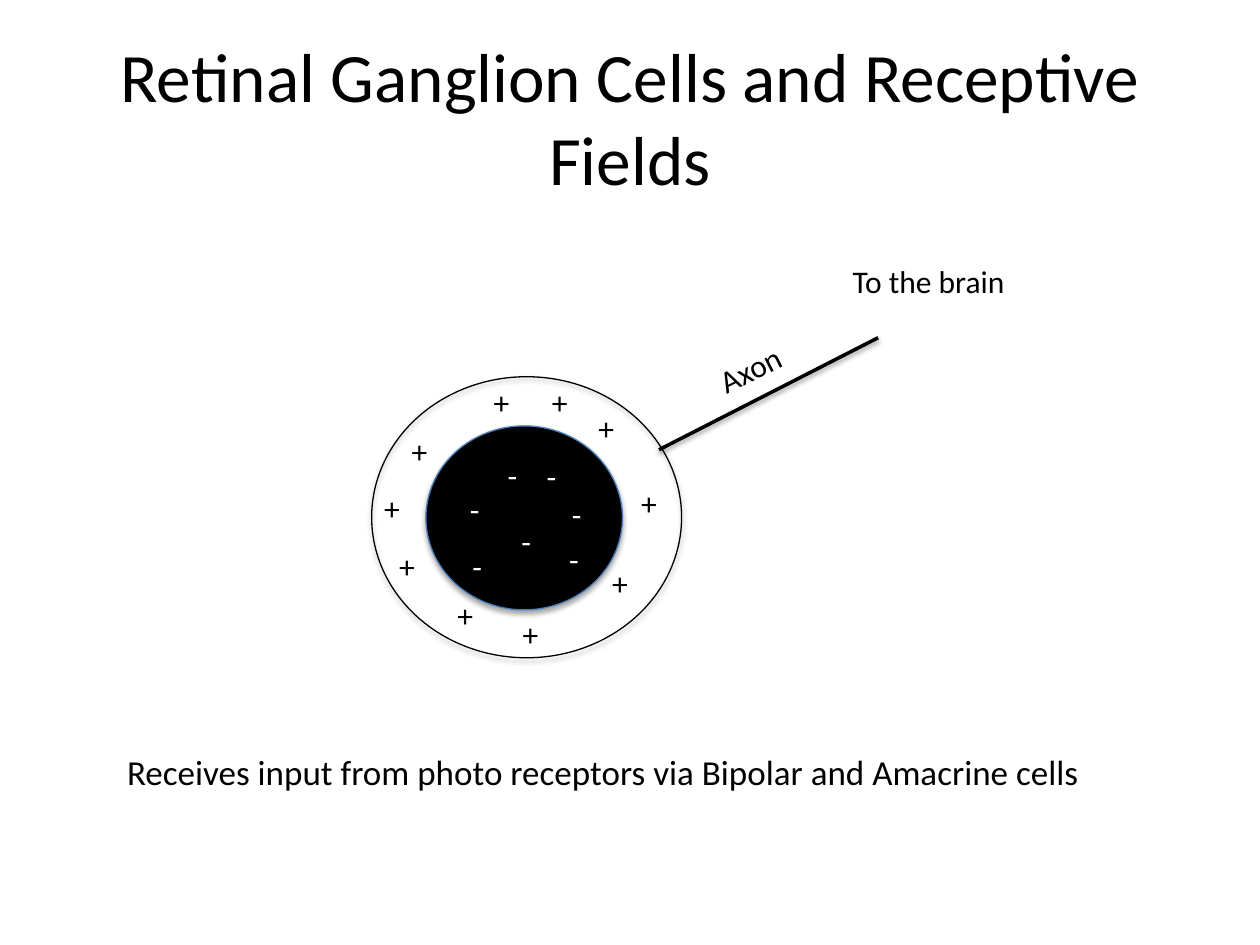
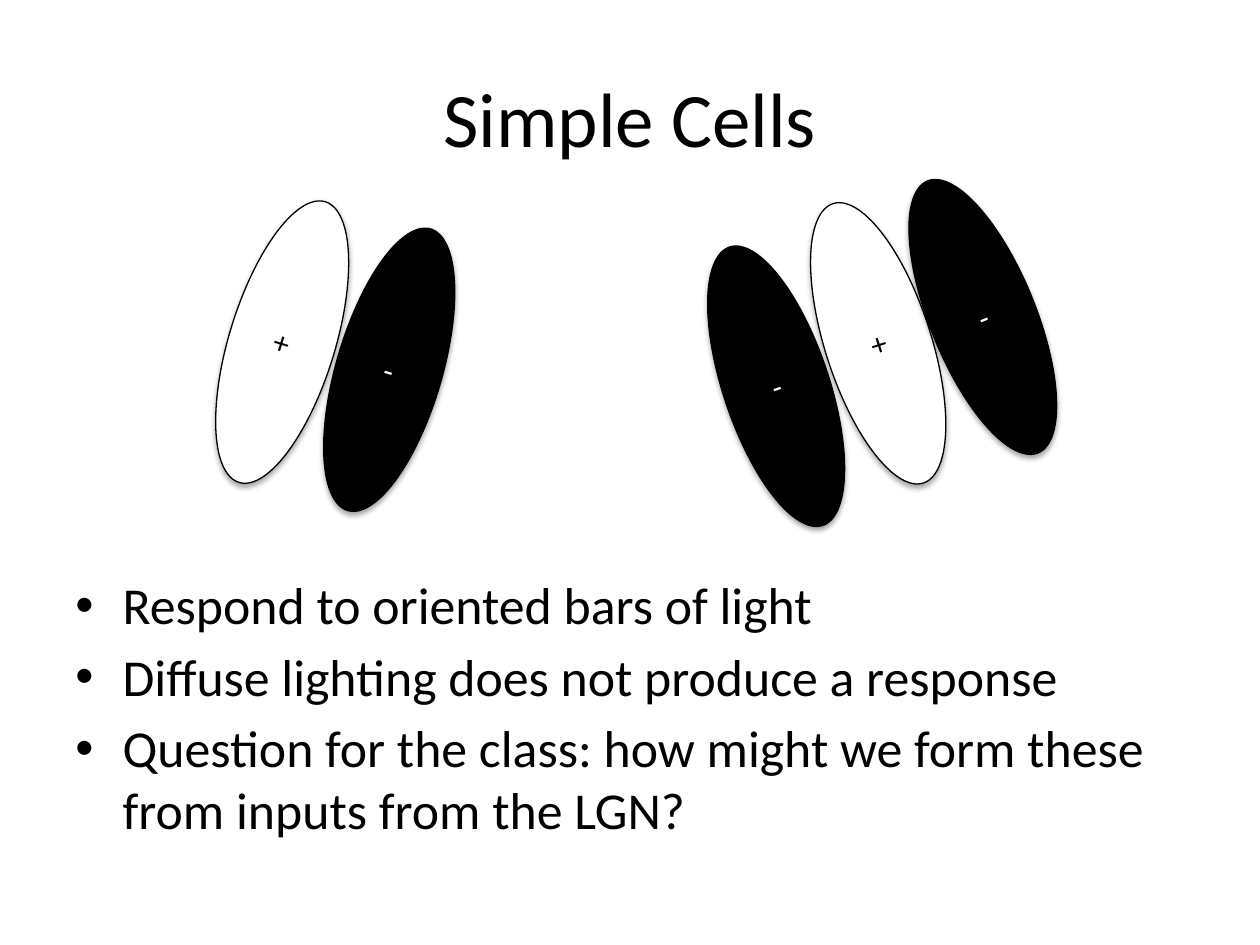
from collections import namedtuple
from dataclasses import dataclass

from lxml.etree import SubElement
from pptx import Presentation
from pptx.dml.color import RGBColor
from pptx.enum.shapes import MSO_CONNECTOR, MSO_SHAPE
from pptx.enum.text import MSO_ANCHOR, PP_ALIGN
from pptx.oxml.ns import qn
from pptx.util import Pt

Box = namedtuple("Box", "left top width height")


@dataclass(frozen=True)
class Theme:
    font: str = "Calibri"
    black: RGBColor = RGBColor(0, 0, 0)
    white: RGBColor = RGBColor(255, 255, 255)
    blue: RGBColor = RGBColor(0x4B, 0x7E, 0xBC)
    title: float = 44
    long_title: float = 39.6
    bullet: float = 29.6
    caption: float = 20
    label: float = 18
    outline: float = 0.75
    axon: float = 2


THEME = Theme()
TITLE_BOX = Box(36, 21.6, 648, 90)

# Offsets from the top left corner of the receptive field
SURROUND_SIGNS = [(62.6, 0), (95.8, 0), (122.4, 15.1), (146.9, 57.6), (130.3, 103.7),
                  (79.2, 132.5), (41.8, 121.7), (0, 60.5), (8.6, 93.6), (15.8, 28.1)]
CENTRE_SIGNS = [(92.9, 42.5), (49, 61.2), (78.5, 79.2), (107.3, 64.1),
                (50.4, 93.6), (70.6, 41.8), (105.8, 90)]

# Left, top, rotation and whether the bar is excitatory
TWO_BARS = [(0, 0, 17.1, True), (61.2, 15.8, 16.4, False)]
THREE_BARS = [(58.3, 15.1, 342.1, True), (118.1, 0, 337.9, False), (0, 39.6, 341.5, False)]

BULLETS = ["Respond to oriented bars of light",
           "Diffuse lighting does not produce a response",
           "Question for the class: how might we form these from inputs from the LGN?"]


def inside(box, left, top, width, height):
    return Box(box.left + left, box.top + top, width, height)


def points(box):
    return [Pt(value) for value in box]


def add_span(para, text, size, colour=THEME.black):
    span = para.add_run()
    span.text = text
    span.font.name = THEME.font
    span.font.size = Pt(size)
    span.font.color.rgb = colour


def add_shadow(shape, opacity, distance):
    effects = SubElement(shape._element.spPr, qn("a:effectLst"))
    shadow = SubElement(effects, qn("a:outerShdw"), blurRad=str(Pt(3.1)),
                        dist=str(Pt(distance)), dir="5400000", rotWithShape="0")
    colour = SubElement(shadow, qn("a:srgbClr"), val=str(THEME.black))
    SubElement(colour, qn("a:alpha"), val=str(opacity * 1000))


def add_label(page, box, text, size=THEME.label, colour=THEME.black, rotation=0):
    label = page.shapes.add_textbox(*points(box))
    label.rotation = rotation
    label.text_frame.word_wrap = True
    add_span(label.text_frame.paragraphs[0], text, size, colour)


def add_ellipse(page, box, fill=None, outline=THEME.black):
    ellipse = page.shapes.add_shape(MSO_SHAPE.OVAL, *points(box))
    if fill is None:
        ellipse.fill.background()
    else:
        ellipse.fill.solid()
        ellipse.fill.fore_color.rgb = fill
    ellipse.line.color.rgb = outline
    ellipse.line.width = Pt(THEME.outline)
    add_shadow(ellipse, 35, 1.8)
    return ellipse


def add_titled_page(deck, text, size):
    page = deck.slides.add_slide(deck.slide_layouts[5])
    title = page.shapes.title
    title.left, title.top, title.width, title.height = points(TITLE_BOX)
    title.text_frame.vertical_anchor = MSO_ANCHOR.MIDDLE
    para = title.text_frame.paragraphs[0]
    para.alignment = PP_ALIGN.CENTER
    add_span(para, text, size)
    return page


def draw_receptive_field(page, box):
    # Centre and surround
    add_ellipse(page, inside(box, 31, 28.1, 112.3, 105.1), THEME.black, THEME.blue)
    add_ellipse(page, box)
    for signs, text, colour in ((SURROUND_SIGNS, "+", THEME.black),
                                (CENTRE_SIGNS, "-", THEME.white)):
        for left, top in signs:
            add_label(page, inside(box, left, top, 42.5, 28.8), text, colour=colour)


def draw_axon(page, box):
    # The axon rises from the bottom left to the top right of its box
    axon = page.shapes.add_connector(
        MSO_CONNECTOR.STRAIGHT, Pt(box.left), Pt(box.top + box.height),
        Pt(box.left + box.width), Pt(box.top))
    axon.line.color.rgb = THEME.black
    axon.line.width = Pt(THEME.axon)
    add_shadow(axon, 38, 1.6)
    add_label(page, inside(box, 25.2, -2.2, 75.6, 28.8), "Axon", rotation=333.5)
    add_label(page, inside(box, 103.6, -46.8, 167.8, 28.8), "To the brain")


def draw_bars(page, box, bars):
    for left, top, rotation, excitatory in bars:
        fill, ink = (THEME.white, THEME.black) if excitatory else (THEME.black, THEME.white)
        bar = add_ellipse(page, inside(box, left, top, 60.5, 167.8), fill)
        bar.rotation = rotation
        bar.text_frame.vertical_anchor = MSO_ANCHOR.MIDDLE
        para = bar.text_frame.paragraphs[0]
        para.alignment = PP_ALIGN.CENTER
        add_span(para, "+" if excitatory else "-", THEME.label, ink)


def draw_bullets(page, box, lines):
    frame = page.shapes.add_textbox(*points(box)).text_frame
    frame.word_wrap = True
    for index, line in enumerate(lines):
        para = frame.add_paragraph() if index else frame.paragraphs[0]
        properties = para._p.get_or_add_pPr()
        properties.set("marL", str(Pt(27)))
        properties.set("indent", str(Pt(-27)))
        SubElement(properties, qn("a:buFont"), typeface="Arial")
        SubElement(properties, qn("a:buChar"), char="•")
        para.space_before = Pt(5.3 if index else 0)
        add_span(para, line, THEME.bullet)


def build_ganglion_page(deck):
    page = add_titled_page(deck, "Retinal Ganglion Cells and Receptive Fields",
                           THEME.long_title)
    draw_receptive_field(page, Box(212.4, 215.3, 177.1, 160.6))
    draw_axon(page, Box(376.6, 193, 125.2, 64))
    add_label(page, Box(65.5, 425.5, 622.8, 31.7),
              "Receives input from photo receptors via Bipolar and Amacrine cells",
              THEME.caption)


def build_simple_cells_page(deck):
    page = add_titled_page(deck, "Simple Cells", THEME.title)
    draw_bullets(page, Box(36, 324, 648, 158.4), BULLETS)
    draw_bars(page, Box(131, 111.6, 121.7, 183.6), TWO_BARS)
    draw_bars(page, Box(413.3, 97.2, 178.6, 207.4), THREE_BARS)


def main():
    deck = Presentation()
    deck.slide_width, deck.slide_height = Pt(720), Pt(540)
    build_ganglion_page(deck)
    build_simple_cells_page(deck)
    deck.save("out.pptx")


if __name__ == "__main__":
    main()
